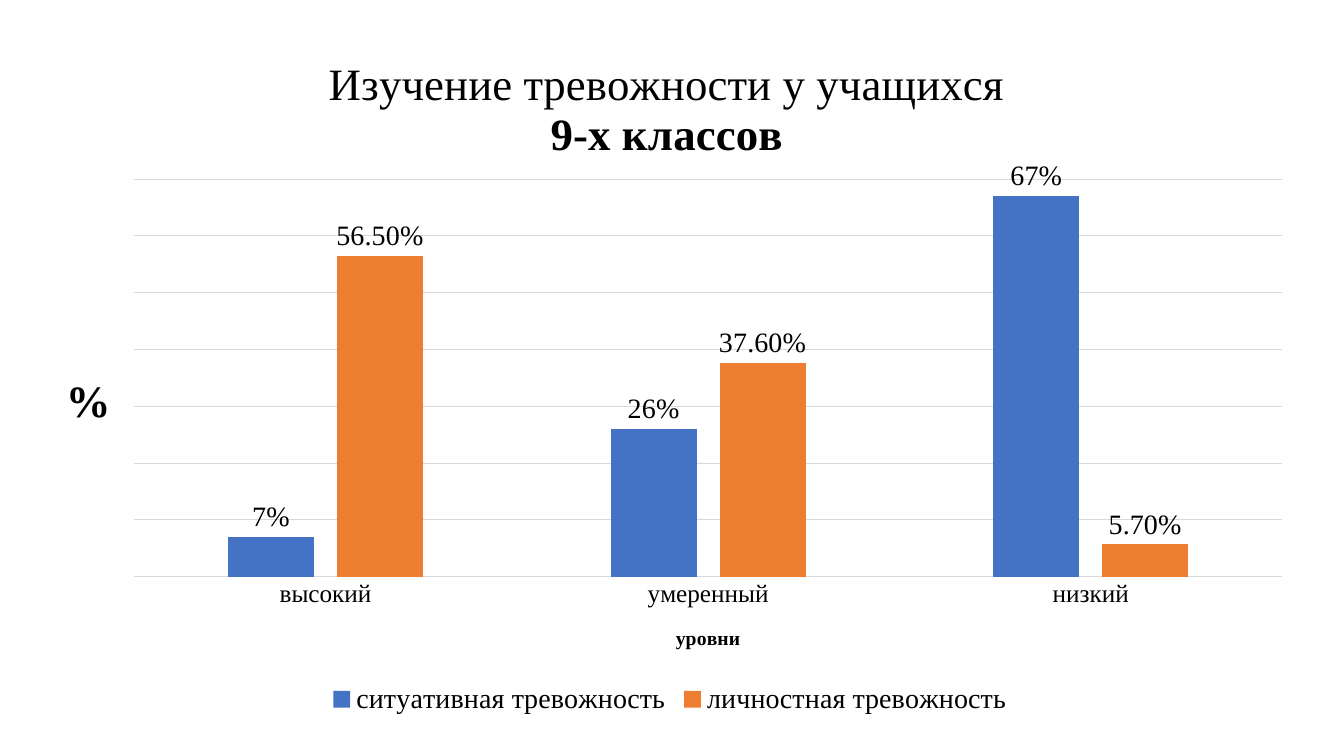
from lxml import etree
from pptx import Presentation
from pptx import util as u
from pptx.chart.data import CategoryChartData
from pptx.dml.color import RGBColor
from pptx.enum import chart as ch
from pptx.oxml.ns import qn

FACE = "Times New Roman"


def paint(part, tone):
    part.solid()
    part.fore_color.rgb = RGBColor.from_string(tone)


def style(font, size, bold=False):
    form = {"name": FACE, "size": u.Pt(size), "bold": bold}
    for key, val in form.items():
        setattr(font, key, val)
    paint(font.fill, "000000")


deck = Presentation()
deck.slide_width, deck.slide_height = u.Inches(13.33), u.Inches(7.5)
slide = deck.slides.add_slide(deck.slide_layouts[6])

data = CategoryChartData()
data.categories = ["высокий", "умеренный", "низкий"]
rows = [
    ("ситуативная тревожность", [0.07, 0.26, 0.67], "4472C4", "0%"),
    ("личностная тревожность", [0.565, 0.376, 0.057], "ED7D31", "0.00%"),
]
for name, vals, tone, form in rows:
    data.add_series(name, vals, form)

chart = slide.shapes.add_chart(
    ch.XL_CHART_TYPE.COLUMN_CLUSTERED,
    u.Inches(0.32), u.Inches(0.35), u.Inches(12.65), u.Inches(6.8), data).chart
style(chart.font, 10)

plot = chart.plots[0]
for key, val in {"gap_width": 219, "overlap": -27, "vary_by_categories": False}.items():
    setattr(plot, key, val)
for bars, (name, vals, tone, form) in zip(plot.series, rows):
    paint(bars.format.fill, tone)
    tags = bars.data_labels
    marks = {"show_value": True, "number_format": form, "number_format_is_linked": False,
             "position": ch.XL_LABEL_POSITION.OUTSIDE_END}
    for key, val in marks.items():
        setattr(tags, key, val)
    style(tags.font, 20)

base, scale = chart.category_axis, chart.value_axis
base.major_tick_mark = ch.XL_TICK_MARK.NONE
style(base.tick_labels.font, 18)
limits = {"minimum_scale": 0, "maximum_scale": 0.7, "major_unit": 0.1,
          "has_major_gridlines": True, "visible": False}
for key, val in limits.items():
    setattr(scale, key, val)
scale.tick_labels.number_format = "0%"
scale.tick_labels.number_format_is_linked = False
for line in (base.format.line, scale.major_gridlines.format.line):
    line.width = u.Pt(0.75)
    paint(line.fill, "D9D9D9")

heads = [
    (chart.chart_title, [("Изучение тревожности у учащихся", 32, False), ("9-х классов", 32, True)]),
    (base.axis_title, [("уровни", 14, True)]),
    (scale.axis_title, [("%", 32, True)]),
]
for head, lines in heads:
    frame = head.text_frame
    for num, (words, size, bold) in enumerate(lines):
        para = frame.add_paragraph() if num else frame.paragraphs[0]
        run = para.add_run()
        run.text = words
        style(run.font, size, bold)

chart.has_legend = True
chart.legend.position = ch.XL_LEGEND_POSITION.BOTTOM
chart.legend.include_in_layout = False
style(chart.legend.font, 20)

root = chart.element
area = root.find(".//" + qn("c:plotArea"))
name = root.find(qn("c:chart")).find(qn("c:title"))
unit = area.find(qn("c:valAx")).find(qn("c:title"))
unit.find(".//" + qn("a:bodyPr")).set("rot", "0")
places = [
    (area, {"x": 0.08, "y": 0.21, "w": 0.9, "h": 0.58}),
    (name, {"x": 0.23, "y": 0.03}),
    (unit, {"x": 0.02, "y": 0.48}),
]
for part, spots in places:
    lay = part.find(qn("c:layout"))
    if lay is None:
        lay = etree.Element(qn("c:layout"))
        part.insert(0 if part is area else 1, lay)
    hand = etree.SubElement(lay, qn("c:manualLayout"))
    if part is area:
        etree.SubElement(hand, qn("c:layoutTarget"), val="inner")
    for key in ("x", "y"):
        etree.SubElement(hand, qn("c:" + key + "Mode"), val="edge")
    for key, val in spots.items():
        etree.SubElement(hand, qn("c:" + key), val=str(val))

deck.save("out.pptx")
